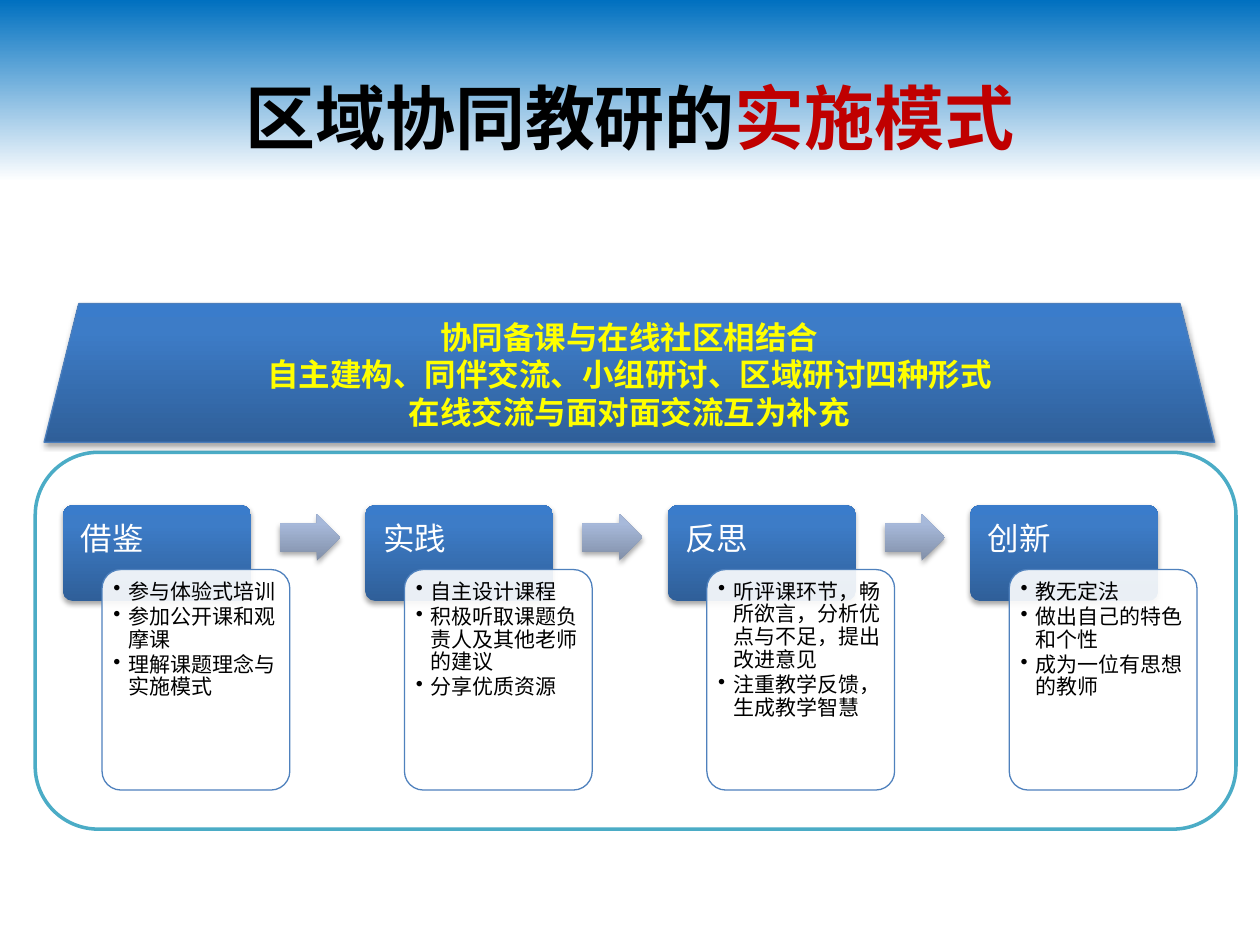
"""Build the slide on the implementation model of regional collaborative teaching research."""
from lxml.etree import SubElement
from pptx import Presentation
from pptx.dml.color import RGBColor
from pptx.enum.shapes import MSO_SHAPE
from pptx.enum.text import MSO_ANCHOR, PP_ALIGN
from pptx.oxml.ns import qn
from pptx.util import Inches, Pt

COLORS = {
    "black": "000000", "white": "FFFFFF", "red": "C00000", "yellow": "FFFF00",
    "sky": "0070C0", "teal": "4BACC6", "outline": "4F81BD", "banner_edge": "4B7EBC",
    "blue_dark": "2F5F99", "blue": "3D7CC7", "blue_light": "3A7CCB",
    "gray_dark": "818FA8", "gray": "A7B9DA", "gray_light": "A7BADC",
}
SKY = ((0, "sky"), (100, "white"))
BLUE = ((0, "blue_dark"), (80, "blue"), (100, "blue_light"))
GRAY = ((0, "gray_dark"), (80, "gray"), (100, "gray_light"))
SANS = "Noto Sans CJK SC"
SANS_ALT = "Noto Sans CJK JP"
COLUMNS, ROWS = 100, 75
STEP = 24
BANNER = (
    "协同备课与在线社区相结合",
    "自主建构、同伴交流、小组研讨、区域研讨四种形式",
    "在线交流与面对面交流互为补充",
)
STAGES = (
    ("借鉴", ("参与体验式培训", "参加公开课和观摩课", "理解课题理念与实施模式")),
    ("实践", ("自主设计课程", "积极听取课题负责人及其他老师的建议", "分享优质资源")),
    ("反思", ("听评课环节，畅所欲言，分析优点与不足，提出改进意见", "注重教学反馈，生成教学智慧")),
    ("创新", ("教无定法", "做出自己的特色和个性", "成为一位有思想的教师")),
)


class SlideBuilder:
    """Hold the style and the current slide, and draw each kind of element."""

    def __init__(self, deck):
        """Add a blank page and work out the grid unit."""
        self.page = deck.slides.add_slide(deck.slide_layouts[6])
        self.column = deck.slide_width / COLUMNS
        self.row = deck.slide_height / ROWS

    def place(self, left, top, width, height):
        """Turn grid columns and rows into slide lengths."""
        return (round(left * self.column), round(top * self.row),
                round(width * self.column), round(height * self.row))

    def color(self, name):
        """Look up a named colour."""
        return RGBColor.from_string(COLORS[name])

    def shape(self, kind, at, fill, angle=270, line=None, weight=0.75,
              adjust=(), opacity=100, shadow=False):
        """Draw a preset shape with a plain or gradient fill."""
        box = self.page.shapes.add_shape(kind, *self.place(*at))
        for index, value in enumerate(adjust):
            box.adjustments[index] = value
        if isinstance(fill, str):
            box.fill.solid()
            box.fill.fore_color.rgb = self.color(fill)
            if opacity < 100:
                tone = box._element.spPr.find(qn("a:solidFill"))[0]
                SubElement(tone, qn("a:alpha"), val=str(opacity * 1000))
        else:
            self.gradient(box, fill, angle)
        if line:
            box.line.color.rgb = self.color(line)
            box.line.width = Pt(weight)
        else:
            box.line.fill.background()
        box.shadow.inherit = False
        if shadow:
            self.shadow(box)
        return box

    def gradient(self, box, stops, angle):
        """Fill a shape with colour stops at a clockwise angle."""
        box.fill.gradient()
        box.fill.gradient_angle = 360 - angle
        stop_list = box._element.spPr.find(qn("a:gradFill")).find(qn("a:gsLst"))
        stop_list.clear()
        for position, name in stops:
            stop = SubElement(stop_list, qn("a:gs"), pos=str(position * 1000))
            SubElement(stop, qn("a:srgbClr"), val=COLORS[name])

    def shadow(self, box):
        """Give a shape a soft shadow below it."""
        effects = box._element.spPr.find(qn("a:effectLst"))
        outer = SubElement(effects, qn("a:outerShdw"), blurRad=str(Pt(3.1)),
                           dist=str(Pt(1.8)), dir="5400000", rotWithShape="0")
        tone = SubElement(outer, qn("a:srgbClr"), val=COLORS["black"])
        SubElement(tone, qn("a:alpha"), val="35000")

    def text_box(self, at, insets=(0.1, 0.05, 0.1, 0.05), anchor=MSO_ANCHOR.TOP):
        """Add a wrapping text box and return its frame."""
        frame = self.page.shapes.add_textbox(*self.place(*at)).text_frame
        frame.word_wrap = True
        frame.vertical_anchor = anchor
        (frame.margin_left, frame.margin_top,
         frame.margin_right, frame.margin_bottom) = map(Inches, insets)
        return frame

    def add_text(self, frame, paragraphs, size, align=PP_ALIGN.LEFT, bold=False,
                 spacing=None, after=None, bullet=False):
        """Add paragraphs given as runs of text, colour and font."""
        for index, runs in enumerate(paragraphs):
            para = frame.add_paragraph() if index else frame.paragraphs[0]
            para.alignment = align
            if spacing:
                para.line_spacing = spacing
                para.space_after = Pt(after)
            if bullet:
                self.bullet(para)
            for text, tone, face in runs:
                span = para.add_run()
                span.text = text
                span.font.size = Pt(size)
                span.font.bold = bold
                span.font.color.rgb = self.color(tone)
                span.font.name = face
                SubElement(span._r.get_or_add_rPr(), qn("a:ea"), typeface=face)

    def bullet(self, para):
        """Give a paragraph a hanging bullet."""
        properties = para._p.get_or_add_pPr()
        properties.set("marL", str(Inches(0.12)))
        properties.set("indent", str(-Inches(0.12)))
        SubElement(properties, qn("a:buChar"), char="•")

    def stage(self, left, name, points):
        """Draw one stage: its heading block and its card of points."""
        self.shape(MSO_SHAPE.ROUNDED_RECTANGLE, (left, 40.1, 14.9, 7.6), BLUE,
                   adjust=(0.1,), shadow=True)
        heading = self.text_box((left, 40.1, 14.9, 5.1), (0.14, 0.14, 0.14, 0.07))
        self.add_text(heading, [[(name, "white", SANS)]], 18, spacing=0.9, after=6.3)
        card = (left + 3.1, 45.2, 14.9, 17.5)
        self.shape(MSO_SHAPE.ROUNDED_RECTANGLE, card, "white", line="outline",
                   adjust=(0.1,), opacity=90)
        body = self.text_box(card, (0.09,) * 4)
        self.add_text(body, [[(point, "black", SANS)] for point in points], 12,
                      spacing=0.9, after=1.5, bullet=True)

    def arrow(self, left):
        """Draw the block arrow that leads to the next stage."""
        self.shape(MSO_SHAPE.RIGHT_ARROW, (left, 40.8, 4.8, 3.7), GRAY,
                   adjust=(0.6, 0.5), shadow=True)


def main():
    """Compose and save the slide."""
    deck = Presentation()
    deck.slide_width, deck.slide_height = Inches(10), Inches(7.5)
    builder = SlideBuilder(deck)

    builder.shape(MSO_SHAPE.RECTANGLE, (0, 0, COLUMNS, 14.4), SKY, angle=90)
    title = builder.text_box((5, 3, 90, 12.5), anchor=MSO_ANCHOR.MIDDLE)
    builder.add_text(title, [[("区域协同教研的", "black", SANS), ("实施模式", "red", SANS_ALT)]],
                     40, PP_ALIGN.CENTER, bold=True)

    builder.shape(MSO_SHAPE.ROUNDED_RECTANGLE, (2.8, 35.9, 95.3, 29.9), "white",
                  line="teal", weight=2)
    for index, (name, points) in enumerate(STAGES):
        left = 5 + index * STEP
        builder.stage(left, name, points)
        if index < len(STAGES) - 1:
            builder.arrow(left + 17.2)

    banner = builder.shape(MSO_SHAPE.TRAPEZOID, (3.5, 24.1, 92.9, 11), BLUE,
                           line="banner_edge", shadow=True)
    banner.text_frame.vertical_anchor = MSO_ANCHOR.MIDDLE
    builder.add_text(banner.text_frame, [[(text, "yellow", SANS)] for text in BANNER],
                     18, PP_ALIGN.CENTER, bold=True)
    deck.save("out.pptx")


if __name__ == "__main__":
    main()
